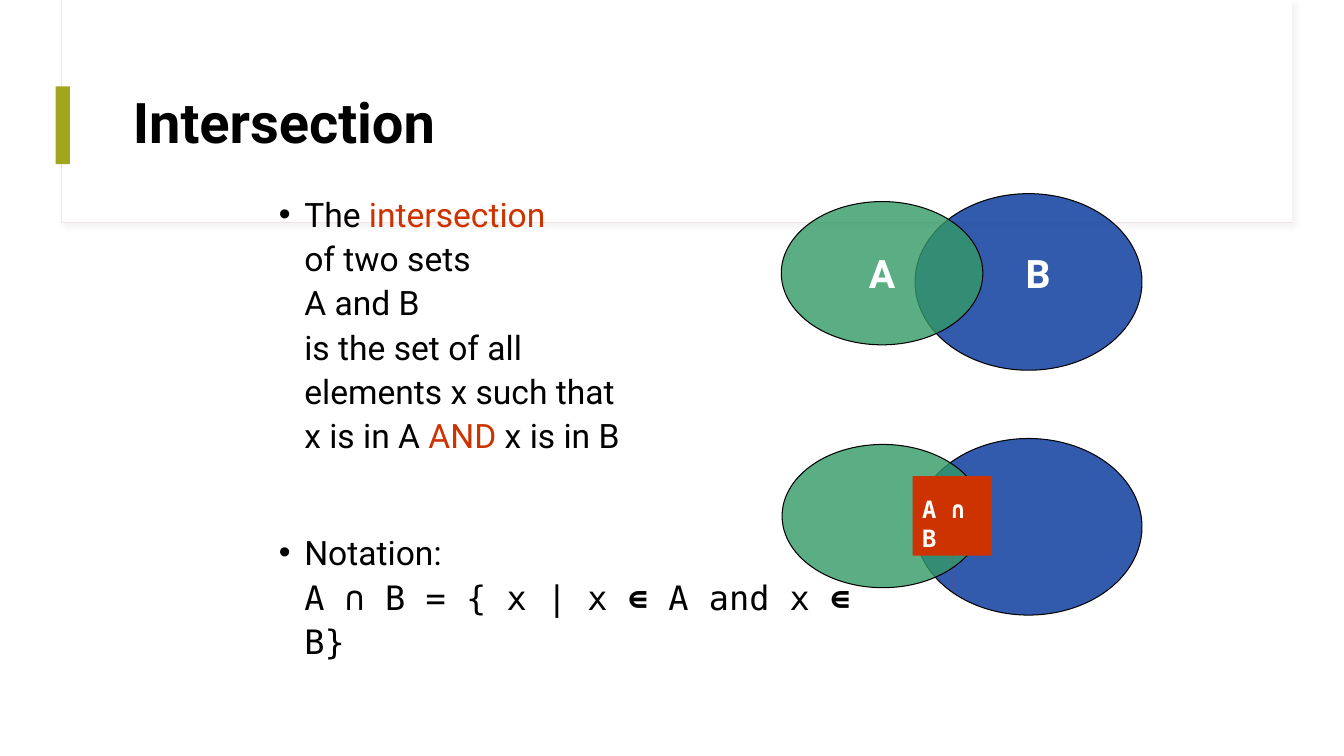
from lxml import etree
from pptx import Presentation
from pptx.dml.color import RGBColor
from pptx.enum.shapes import MSO_SHAPE
from pptx.enum.text import MSO_ANCHOR, PP_ALIGN
from pptx.oxml.ns import qn
from pptx.util import Cm, Pt

RECT, OVAL = MSO_SHAPE.RECTANGLE, MSO_SHAPE.OVAL
TOP, MIDDLE = MSO_ANCHOR.TOP, MSO_ANCHOR.MIDDLE
LEFT, CENTER = PP_ALIGN.LEFT, PP_ALIGN.CENTER
SANS, MONO = "Roboto", "DejaVu Sans Mono"
BLACK, WHITE, RED = "000000", "FFFFFF", "CC3300"
GREEN, BLUE, OLIVE = "339966", "003399", "A0A61D"


def color(code):
    return RGBColor.from_string(code)


def child(node, tag, **attrs):
    return etree.SubElement(node, qn(tag), {k: str(v) for k, v in attrs.items()})


def curve(start, first, second, end, steps=16):
    """Points of a cubic curve, both ends included."""
    points = []
    for i in range(steps + 1):
        t = i / steps
        u = 1 - t
        points.append(tuple(
            u**3 * a + 3 * u * u * t * b + 3 * u * t * t * c + t**3 * d
            for a, b, c, d in zip(start, first, second, end)))
    return points


class Page:
    def __init__(self, deck):
        self.slide = deck.slides.add_slide(deck.slide_layouts[6])
        self.shapes = self.slide.shapes

    def paint(self, shape, fill, line=None, alpha=None):
        shape.shadow.inherit = False
        shape.fill.solid()
        shape.fill.fore_color.rgb = color(fill)
        if alpha:
            tint = shape.fill._xPr.find(qn("a:solidFill"))[0]
            child(tint, "a:alpha", val=alpha * 1000)
        if line:
            shape.line.color.rgb = color(line)
            shape.line.width = Pt(0.75)
        else:
            shape.line.fill.background()
        return shape

    def shape(self, kind, box, fill, line=None, alpha=None):
        item = self.shapes.add_shape(kind, *map(Cm, box))
        return self.paint(item, fill, line, alpha)

    def shadow(self, shape):
        effects = shape._element.spPr.find(qn("a:effectLst"))
        outer = child(effects, "a:outerShdw", blurRad=Pt(4), dist=Pt(3),
                      dir=45 * 60000, algn="tl", rotWithShape=0)
        tint = child(outer, "a:srgbClr", val="D9D9D9")
        child(tint, "a:alpha", val=30000)

    def outline(self, points, fill):
        pen = self.shapes.build_freeform(*points[0], scale=Cm(1))
        pen.add_line_segments(points[1:], close=True)
        return self.paint(pen.convert_to_shape(), fill)

    def run(self, par, text, size, font=SANS, tint=BLACK, bold=False):
        for i, part in enumerate(text.split("\n")):
            if i:
                par.add_line_break()
            if part:
                run = par.add_run()
                run.text = part
                run.font.size = Pt(size)
                run.font.name = font
                run.font.bold = bold
                run.font.color.rgb = color(tint)

    def label(self, shape, text, size, font=SANS, tint=WHITE,
              align=LEFT, anchor=TOP, wrap=True):
        frame = shape.text_frame
        frame.word_wrap = wrap
        frame.vertical_anchor = anchor
        par = frame.paragraphs[0]
        par.alignment = align
        self.run(par, text, size, font, tint, True)
        return par

    def text(self, box):
        item = self.shapes.add_textbox(*map(Cm, box))
        item.text_frame.word_wrap = True
        return item

    def bullets(self, box, items, size):
        frame = self.text(box).text_frame
        for i, (gap, runs) in enumerate(items):
            par = frame.add_paragraph() if i else frame.paragraphs[0]
            par.line_spacing = 1.1
            par.space_before = Pt(gap)
            props = par._p.get_or_add_pPr()
            props.set("marL", str(Cm(0.64)))
            props.set("indent", str(-Cm(0.64)))
            child(props, "a:buFont", typeface="Arial")
            child(props, "a:buChar", char="•")
            for text, *style in runs:
                self.run(par, text, size, *style)

    def sets(self, left, top, right, low):
        """Two overlapping ovals: B behind, A in front."""
        self.shape(OVAL, (right, low, 5.72, 4.45), BLUE, BLACK, 80)
        return self.shape(OVAL, (left, top, 5.08, 3.61), GREEN, BLACK, 80)


def main():
    deck = Presentation()
    deck.slide_width, deck.slide_height = Cm(33.87), Cm(19.05)
    page = Page(deck)

    # Header frame and accent bar
    frame = page.shape(RECT, (1.55, 0, 31.01, 5.61), WHITE, "F0E4E6")
    page.shadow(frame)
    page.shape(RECT, (1.57, 0, 30.99, 5.59), WHITE)
    page.shape(RECT, (1.4, 2.18, 0.36, 1.96), OLIVE)

    # Title
    title = page.text((3.1, 1.52, 28.24, 3.28))
    par = page.label(title, "Intersection", 40, tint=BLACK, anchor=MIDDLE)
    par.line_spacing = 0.9

    # Definition and notation
    page.bullets((6.78, 4.65, 15.04, 12.27), [
        (10, [("The ",),
              ("intersection\n", SANS, RED),
              ("of two sets\nA and B\nis the set of all\n"
               "elements x such that\nx is in A ",),
              ("AND", SANS, RED),
              (" x is in B",)]),
        (52, [("Notation:\n",),
              ("A ∩ B = { x | x ", MONO),
              ("∊ ", MONO, BLACK, True),
              ("A and x ", MONO),
              ("∊ ", MONO, BLACK, True),
              ("B}", MONO)]),
    ], 24)

    # Upper diagram: the two sets
    first = page.sets(19.69, 5.08, 23.06, 4.88)
    page.label(first, "A", 28, align=CENTER, anchor=MIDDLE, wrap=False)
    page.label(page.text((25.6, 6.15, 1.27, 1.45)), "B", 28)

    # Lower diagram: the shared part
    page.sets(19.71, 11.2, 23.06, 11.05)
    foot, east, west = (23.6, 14.53), (24.79, 13), (23.11, 12.93)
    lens = (curve(foot, (24.33, 14.2), (24.79, 13.64), east)
            + curve(east, (24.79, 12.5), (24.49, 12), (23.93, 11.66))
            + curve((24, 11.63), (23.52, 11.96), (23.19, 12.42), west)
            + curve(west, (23.01, 13.46), (23.19, 14.05), foot))
    page.outline(lens, RED)
    page.label(page.text((22.99, 12.34, 2.13, 0.99)), "A ∩ B", 17, MONO)

    deck.save("out.pptx")


if __name__ == "__main__":
    main()
